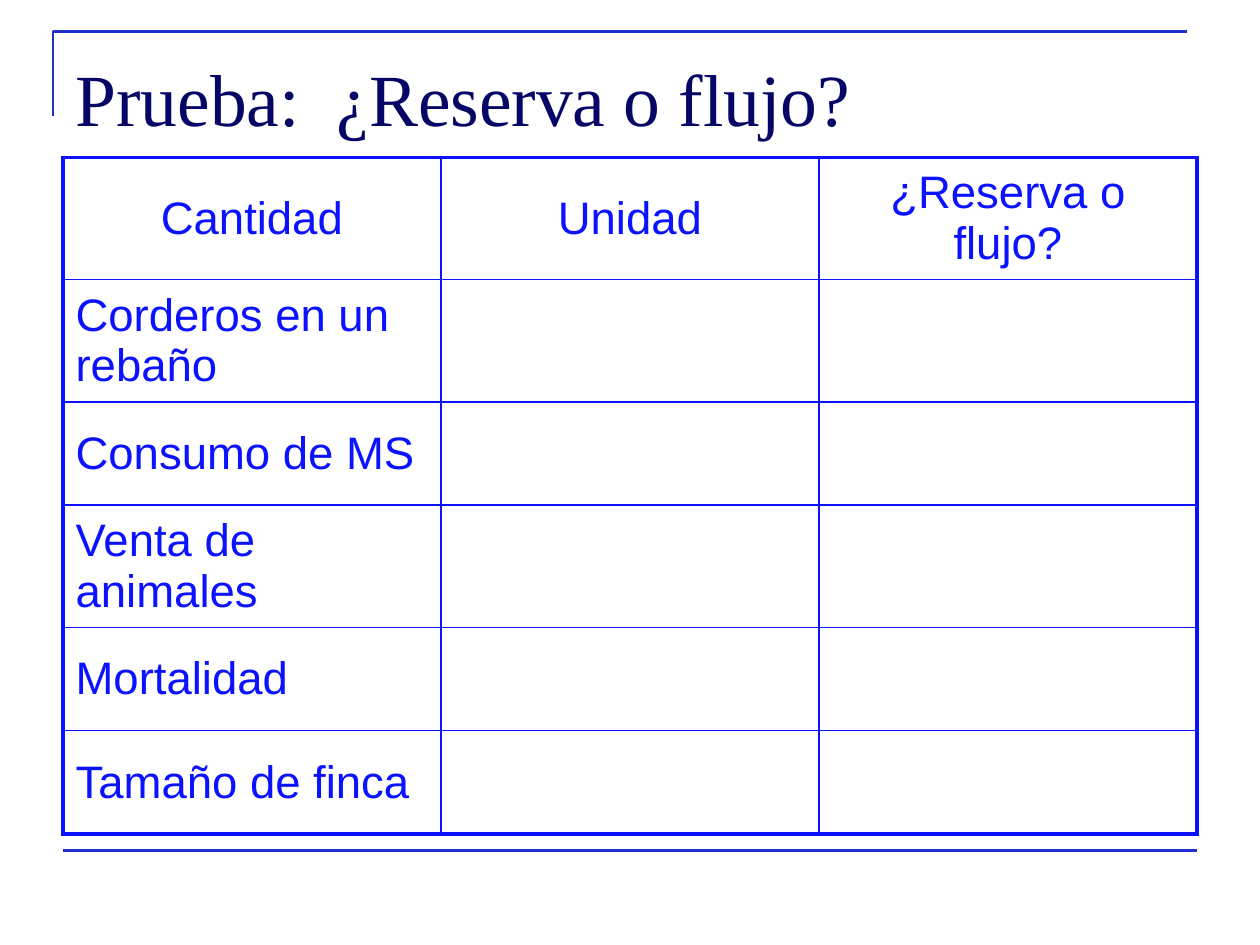
from lxml.etree import SubElement
from pptx import Presentation
from pptx.dml.color import RGBColor
from pptx.enum.shapes import MSO_CONNECTOR as CONN
from pptx.enum.text import MSO_ANCHOR as ANCHOR, PP_ALIGN as ALIGN
from pptx.oxml.ns import qn
from pptx.util import Inches, Pt

BLUE = RGBColor(0x0A, 0x12, 0xFF)
RULE = RGBColor(0x20, 0x2E, 0xCC)
NAVY = RGBColor(0x06, 0x06, 0x66)

W, H = 10, 7.5
MARGIN = W / 20
CONTENT_W = W - 2 * MARGIN
TALL, SHORT = 0.97, 0.82
THIN, THICK = 1, 2.25

HEADERS = ["Cantidad", "Unidad", "¿Reserva o flujo?"]
QUANTITIES = [
    ("Corderos en un rebaño", TALL),
    ("Consumo de MS", SHORT),
    ("Venta de animales", TALL),
    ("Mortalidad", SHORT),
    ("Tamaño de finca", SHORT),
]


def write(tf, text, size=26, font="Arial", color=BLUE, align=ALIGN.LEFT):
    p = tf.paragraphs[0]
    p.alignment = align
    r = p.add_run()
    r.text = text
    r.font.size, r.font.name, r.font.bold = Pt(size), font, False
    r.font.color.rgb = color


def set_borders(cell, **widths):
    """Draw the cell's edges; widths are points keyed L, R, T, B."""
    tcPr = cell._tc.get_or_add_tcPr()
    for side in "LRTB":
        ln = SubElement(tcPr, qn(f"a:ln{side}"), w=str(Pt(widths[side])))
        fill = SubElement(ln, qn("a:solidFill"))
        SubElement(fill, qn("a:srgbClr"), val=str(BLUE))


def add_frame(slide, x, y, w, h):
    """Corner bracket at the top left and a rule along the bottom."""
    left, top = x - 0.08, y
    pen = slide.shapes.build_freeform(Inches(left), Inches(top + 0.67), scale=1)
    pen.add_line_segments(
        [(Inches(left), Inches(top)), (Inches(left + w), Inches(top))], close=False)
    bracket = pen.convert_to_shape()
    bracket.shadow.inherit = False
    bracket.fill.background()
    rule = slide.shapes.add_connector(
        CONN.STRAIGHT, Inches(x), Inches(y + h), Inches(x + w), Inches(y + h))
    SubElement(rule._element.spPr, qn("a:effectLst"))
    for sp in (bracket, rule):
        sp.line.color.rgb = RULE
        sp.line.width = Pt(1.5)
    # The line must come before the effect list in the connector's properties.
    spPr = rule._element.spPr
    spPr.append(spPr.find(qn("a:effectLst")))


def add_title(slide, text, x, y, w, h):
    tf = slide.shapes.add_textbox(Inches(x), Inches(y), Inches(w), Inches(h)).text_frame
    tf.word_wrap = True
    tf.margin_top = Inches(0.12)
    write(tf, text, size=42, font="Times New Roman", color=NAVY)


def add_quiz_table(slide, x, y, w):
    heights = [TALL] + [height for _, height in QUANTITIES]
    texts = [HEADERS] + [[name, "", ""] for name, _ in QUANTITIES]
    n_rows, n_cols = len(texts), len(HEADERS)
    table = slide.shapes.add_table(
        n_rows, n_cols, Inches(x), Inches(y), Inches(w), Inches(sum(heights))).table
    table.first_row = table.horz_banding = False
    for col in table.columns:
        col.width = Inches(w / n_cols)
    for i, (row, height) in enumerate(zip(table.rows, heights)):
        row.height = Inches(height)
        for j, cell in enumerate(row.cells):
            set_borders(cell,
                        L=THICK if j == 0 else THIN,
                        R=THICK if j == n_cols - 1 else THIN,
                        T=THICK if i == 0 else THIN,
                        B=THICK if i == n_rows - 1 else THIN)
            cell.fill.background()
            cell.vertical_anchor = ANCHOR.MIDDLE
            if texts[i][j]:
                write(cell.text_frame, texts[i][j],
                      align=ALIGN.CENTER if i == 0 else ALIGN.LEFT)


def main():
    prs = Presentation()
    prs.slide_width, prs.slide_height = Inches(W), Inches(H)
    slide = prs.slides.add_slide(prs.slide_layouts[6])
    add_frame(slide, MARGIN, H / 30, CONTENT_W, H * 26 / 30)
    add_title(slide, "Prueba:  ¿Reserva o flujo?", MARGIN, H / 25, CONTENT_W, H / 6)
    add_quiz_table(slide, MARGIN, H / 6, CONTENT_W)
    prs.save("out.pptx")


if __name__ == "__main__":
    main()
